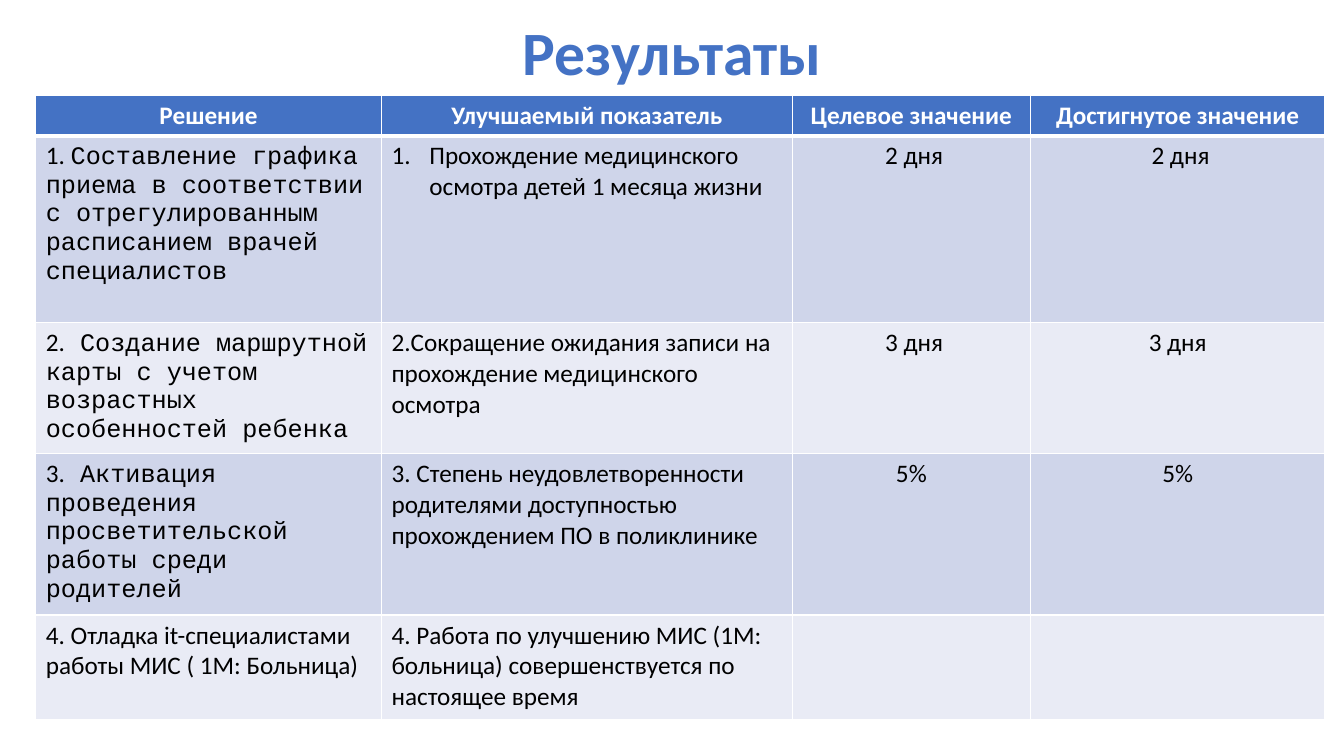
from lxml.etree import SubElement
from pptx import Presentation
from pptx.dml.color import RGBColor
from pptx.enum.text import MSO_ANCHOR as Anchor, PP_ALIGN as Align
from pptx.oxml.ns import qn
from pptx.util import Pt

COLORS = {"accent": "4472C4", "white": "FFFFFF", "black": "000000",
          "odd": "CFD5EA", "even": "E9EBF5"}
SANS, MONO = "Calibri", "Courier New"

TITLE = "Результаты"
HEADER = ["Решение", "Улучшаемый показатель", "Целевое значение", "Достигнутое значение"]
# Solution number, solution text, its font, indicator, target, achieved
RESULTS = [
    ("1. ", "Составление графика приема в соответствии с отрегулированным расписанием врачей специалистов",
     MONO, "Прохождение медицинского осмотра детей 1 месяца жизни", " 2 дня", " 2 дня"),
    ("2.", " Создание маршрутной карты с учетом возрастных особенностей ребенка",
     MONO, "2.Сокращение ожидания записи на прохождение медицинского осмотра", " 3 дня", "3 дня"),
    ("3.", " Активация проведения просветительской работы среди родителей",
     MONO, "3. Степень неудовлетворенности родителями доступностью прохождением ПО в поликлинике", "5%", "5%"),
    ("4.", " Отладка it-специалистами работы МИС ( 1М: Больница)",
     SANS, "4. Работа по улучшению МИС (1М: больница) совершенствуется по настоящее время", "", ""),
]
COLUMN_WIDTHS = [247, 293.5, 170, 210.5]
ROW_HEIGHTS = [29, 133.5, 90.5, 111.5, 75]
TABLE_LEFT, TABLE_TOP = 25.5, 68


def write(frame, *parts, size=18, color="black", bold=False, align=Align.LEFT, spacing=None):
    """Fill the first paragraph with (text, font) parts and return it."""
    para = frame.paragraphs[0]
    para.alignment = align
    if spacing:
        para.line_spacing = spacing
    for text, font in parts:
        if not text:
            continue
        span = para.add_run()
        span.text = text
        span.font.name = font
        span.font.size = Pt(size)
        span.font.bold = bold
        span.font.color.rgb = RGBColor.from_string(COLORS[color])
    return para


def number_paragraph(para, indent):
    props = para._p.get_or_add_pPr()
    props.set("marL", str(Pt(indent)))
    props.set("indent", str(-Pt(indent)))
    SubElement(props, qn("a:buFont"), typeface="+mj-lt")
    SubElement(props, qn("a:buAutoNum"), type="arabicPeriod")


def style_cell(cell, fill, top=1, bottom=1):
    props = cell._tc.get_or_add_tcPr()
    for side, width in (("L", 1), ("R", 1), ("T", top), ("B", bottom)):
        line = SubElement(props, qn(f"a:ln{side}"), w=str(Pt(width)))
        solid = SubElement(line, qn("a:solidFill"))
        SubElement(solid, qn("a:srgbClr"), val=COLORS["white"])
    cell.fill.solid()
    cell.fill.fore_color.rgb = RGBColor.from_string(COLORS[fill])


def add_title(slide):
    box = slide.shapes.add_textbox(Pt(66), Pt(12), Pt(828), Pt(55.5))
    frame = box.text_frame
    frame.word_wrap = True
    frame.vertical_anchor = Anchor.MIDDLE
    write(frame, (TITLE, SANS), size=44, color="accent", bold=True,
          align=Align.CENTER, spacing=0.9)


def add_results(slide):
    table = slide.shapes.add_table(
        len(ROW_HEIGHTS), len(COLUMN_WIDTHS), Pt(TABLE_LEFT), Pt(TABLE_TOP),
        Pt(sum(COLUMN_WIDTHS)), Pt(sum(ROW_HEIGHTS))).table
    for column, width in zip(table.columns, COLUMN_WIDTHS):
        column.width = Pt(width)
    for row, height in zip(table.rows, ROW_HEIGHTS):
        row.height = Pt(height)

    for cell, heading in zip(table.rows[0].cells, HEADER):
        style_cell(cell, "accent", bottom=3)
        write(cell.text_frame, (heading, SANS), color="white", bold=True, align=Align.CENTER)

    for index, (number, solution, font, indicator, *values) in enumerate(RESULTS, start=1):
        cells = list(table.rows[index].cells)
        for cell in cells:
            style_cell(cell, "odd" if index % 2 else "even", top=3 if index == 1 else 1)
        write(cells[0].text_frame, (number, SANS), (solution, font))
        para = write(cells[1].text_frame, (indicator, SANS))
        if index == 1:
            number_paragraph(para, 27)
        for cell, value in zip(cells[2:], values):
            write(cell.text_frame, (value, SANS), align=Align.CENTER)


def main():
    deck = Presentation()
    deck.slide_width, deck.slide_height = Pt(960), Pt(540)
    slide = deck.slides.add_slide(deck.slide_layouts[6])
    add_title(slide)
    add_results(slide)
    deck.save("out.pptx")


if __name__ == "__main__":
    main()
